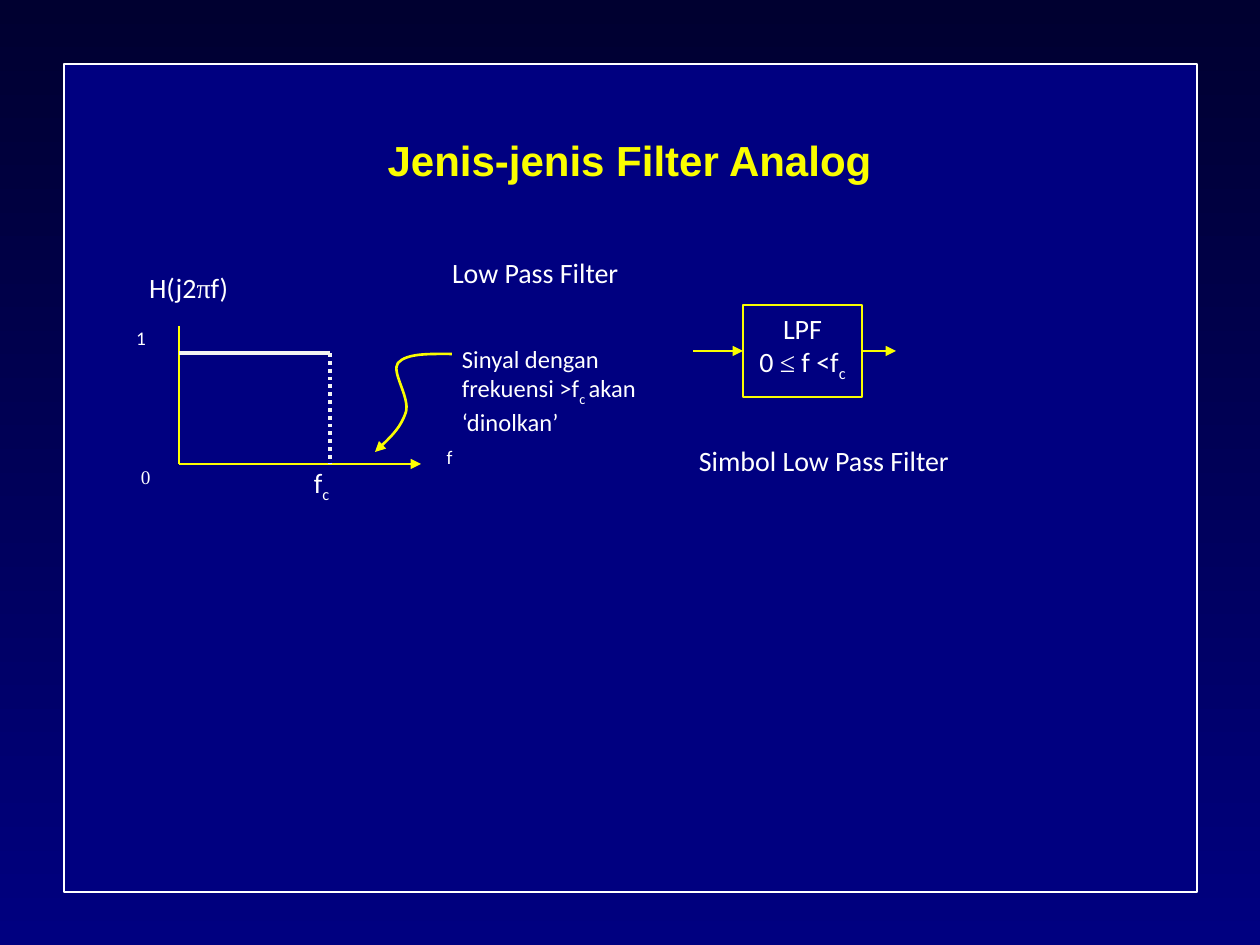
from dataclasses import dataclass

from pptx import Presentation
from pptx.dml.color import RGBColor
from pptx.enum.dml import MSO_LINE
from pptx.enum.shapes import MSO_CONNECTOR, MSO_SHAPE
from pptx.enum.text import MSO_ANCHOR, PP_ALIGN
from pptx.oxml.ns import qn
from pptx.util import Emu, Pt

LEFT, CENTER = PP_ALIGN.LEFT, PP_ALIGN.CENTER
TOP, MIDDLE = MSO_ANCHOR.TOP, MSO_ANCHOR.MIDDLE
DOTTED = MSO_LINE.ROUND_DOT
STRAIGHT, RECT = MSO_CONNECTOR.STRAIGHT, MSO_SHAPE.RECTANGLE
SCALE = 914400 / 126
COLORS = {"top": "000030", "navy": "000080", "white": "FFFFFF", "gold": "FAFD00",
          "axis": "FFFF00", "response": "F2F2F2"}
SERIF = "Times New Roman"


@dataclass
class Label:
    box: tuple[int, int, int, int]
    runs: tuple[tuple[str, str], ...]
    size: int = 16
    align: PP_ALIGN = LEFT
    font: str = "Calibri"


@dataclass
class Line:
    start: tuple[int, int]
    end: tuple[int, int]
    color: str
    width: float = 0.75
    arrow: bool = False
    dash: MSO_LINE | None = None


LABELS = [
    Label((149, 271, 181, 55), (("H(j2", ""), ("π", "serif"), ("f)", ""))),
    Label((136, 326, 43, 55), (("1", ""),), 11),
    Label((141, 465, 43, 55), (("0", ""),), 11, font=SERIF),
    Label((300, 466, 43, 55), (("f", ""), ("c", "sub")), align=CENTER),
    Label((428, 445, 43, 55), (("f", ""),), 11, CENTER),
    Label((452, 256, 168, 55), (("Low Pass Filter", ""),)),
    Label((699, 444, 305, 55), (("Simbol Low Pass Filter", ""),)),
    Label((462, 344, 207, 98), (("Sinyal dengan frekuensi >f", ""), ("c ", "sub"),
                                ("akan ‘dinolkan’", "")), 14),
]
FILTER = Label((743, 305, 119, 92), (("LPF", ""), ("\n", ""), ("0 ", ""), ("≤", "serif"),
                                     (" f <f", ""), ("c", "sub")), align=CENTER)
LINES = [
    Line((179, 326), (179, 464), "axis"),
    Line((179, 464), (421, 464), "axis", arrow=True),
    Line((179, 353), (330, 353), "response", 2.25),
    Line((330, 353), (330, 464), "response", 2.25, dash=DOTTED),
]
SIGNAL_IN = Line((693, 351), (743, 351), "gold", arrow=True)
SIGNAL_OUT = Line((862, 351), (896, 351), "gold", arrow=True)
CURVE = [(452, 354), (430, 354), (407, 353), (398, 363), (391, 372), (410, 397),
         (406, 412), (401, 427), (388, 440), (375, 452)]


def px(n: int) -> Emu:
    """Turn pixels into EMU."""
    return Emu(round(n * SCALE))


def rgb(name: str) -> RGBColor:
    """Look up a named colour."""
    return RGBColor.from_string(COLORS[name])


def style_line(sp, color: str, width: float, arrow: bool = False) -> None:
    """Set line colour, width and an optional end arrowhead."""
    sp.line.color.rgb = rgb(color)
    sp.line.width = Pt(width)
    if arrow:
        ln = sp.line._get_or_add_ln()
        ln.append(ln.makeelement(qn("a:tailEnd"), {"type": "triangle"}))


def add_line(s, line: Line):
    """Draw a straight connector."""
    sp = s.shapes.add_connector(STRAIGHT, *map(px, line.start + line.end))
    if line.dash:
        sp.line.dash_style = line.dash
    style_line(sp, line.color, line.width, line.arrow)
    props = sp._element.spPr
    props.append(props.makeelement(qn("a:effectLst"), {}))
    return sp


def add_rect(s, box: tuple[int, int, int, int], color: str, width: float):
    """Draw an outlined rectangle without fill."""
    sp = s.shapes.add_shape(RECT, *map(px, box))
    sp.shadow.inherit = False
    sp.fill.background()
    style_line(sp, color, width)
    return sp


def write(tf, label: Label) -> None:
    """Write a label's runs into a text frame."""
    tf.word_wrap = True
    tf.vertical_anchor = TOP
    p = tf.paragraphs[0]
    p.alignment = label.align
    p.space_after = Pt(10)
    p.font.size = Pt(label.size)
    p.font.color.rgb = rgb("white")
    for text, style in label.runs:
        if text == "\n":
            p.add_line_break()
            continue
        r = p.add_run()
        r.text = text
        r.font.size = Pt(label.size)
        r.font.color.rgb = rgb("white")
        r.font.name = SERIF if style == "serif" else label.font
        if style == "sub":
            r.font._element.set("baseline", "-25000")


def add_label(s, label: Label) -> None:
    """Add a text box without insets."""
    tf = s.shapes.add_textbox(*map(px, label.box)).text_frame
    tf.margin_left = tf.margin_right = tf.margin_top = tf.margin_bottom = 0
    write(tf, label)


def add_title(s, text: str) -> None:
    """Add the slide heading."""
    tf = s.shapes.add_textbox(*map(px, (136, 84, 987, 158))).text_frame
    tf.word_wrap = True
    tf.vertical_anchor = MIDDLE
    p = tf.paragraphs[0]
    p.text = text
    p.alignment = CENTER
    p.line_spacing = 0.9
    p.font.name, p.font.size, p.font.bold = "Arial", Pt(24), True
    p.font.color.rgb = rgb("gold")


def add_curve(s, points: list[tuple[int, int]]) -> None:
    """Draw a curved arrow through cubic Bezier control points."""
    (x, y), *rest = [(px(x), px(y)) for x, y in points]
    builder = s.shapes.build_freeform(x, y)
    builder.add_line_segments(rest, close=False)
    sp = builder.convert_to_shape()
    sp.shadow.inherit = False
    sp.fill.background()
    style_line(sp, "gold", 1.5, True)
    outline = next(sp._element.iter(qn("a:path")))
    segments = outline.findall(qn("a:lnTo"))
    for i in range(0, len(segments), 3):
        bezier = outline.makeelement(qn("a:cubicBezTo"), {})
        outline.append(bezier)
        for segment in segments[i:i + 3]:
            bezier.append(segment[0])
            outline.remove(segment)


def main() -> None:
    """Build and save the slide."""
    prs = Presentation()
    prs.slide_width, prs.slide_height = px(1260), px(945)
    s = prs.slides.add_slide(prs.slide_layouts[6])
    fill = s.background.fill
    fill.gradient()
    fill.gradient_angle = 270
    for stop, color in zip(fill.gradient_stops, ("top", "navy")):
        stop.color.rgb = rgb(color)
    frame = add_rect(s, (64, 64, 1133, 828), "white", 1)
    frame.fill.solid()
    frame.fill.fore_color.rgb = rgb("navy")
    add_title(s, "Jenis-jenis Filter Analog")
    for line in LINES:
        add_line(s, line)
    for label in LABELS:
        add_label(s, label)
    block = add_rect(s, FILTER.box, "gold", 0.75)
    write(block.text_frame, FILTER)
    add_line(s, SIGNAL_IN).end_connect(block, 1)
    add_line(s, SIGNAL_OUT).begin_connect(block, 3)
    add_curve(s, CURVE)
    prs.save("out.pptx")


if __name__ == "__main__":
    main()
